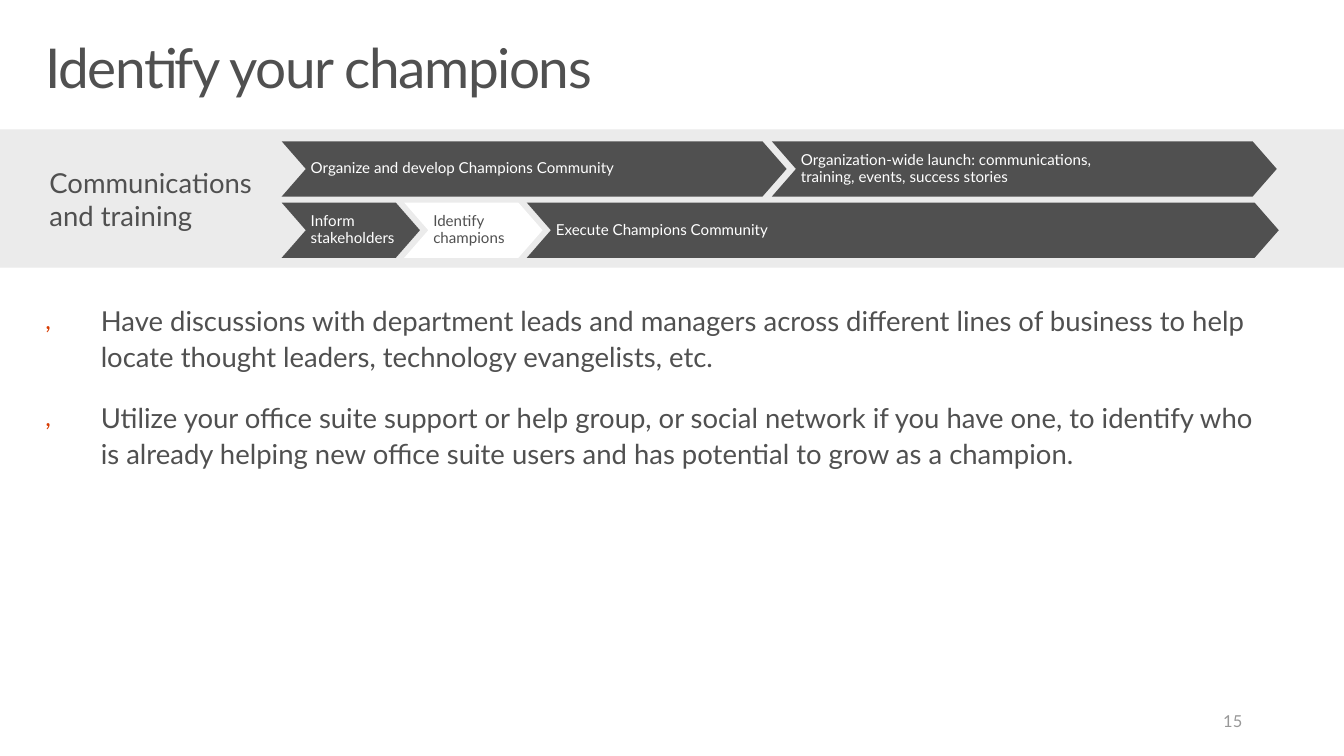
from dataclasses import dataclass

from lxml.etree import SubElement
from pptx import Presentation
from pptx.dml.color import RGBColor
from pptx.enum.shapes import MSO_SHAPE as Preset
from pptx.enum.text import MSO_ANCHOR as Anchor, MSO_AUTO_SIZE as AutoSize, PP_ALIGN as Align
from pptx.oxml.ns import qn
from pptx.shapes.autoshape import Shape
from pptx.shapes.group import GroupShape
from pptx.text.text import TextFrame, _Paragraph as Paragraph
from pptx.util import Inches, Pt


@dataclass(frozen=True)
class Theme:
    font: str = "Lato"
    dark: str = "505050"
    band: str = "EBEBEB"
    white: str = "FFFFFF"
    accent: str = "D83B01"
    muted: str = "989898"
    title_size: int = 40
    body_size: int = 20
    step_size: int = 11
    number_size: int = 12


@dataclass(frozen=True)
class Step:
    label: str
    width: float
    current: bool = False


@dataclass(frozen=True)
class Track:
    top: float
    overlap: float
    steps: tuple[Step, ...]


THEME = Theme()
TRACK_LEFT = 2.85
STEP_HEIGHT = 0.56
CHEVRON_POINT = 0.437
BULLET_INDENT = 0.56
TEXT_INSETS = (0.16, 0.1, 0.16, 0.1)

TRACKS = (
    Track(1.43, 0.15, (
        Step("Organize and develop Champions Community", 5.11),
        Step("Organization-wide launch: communications,\ntraining, events, success stories", 5.11),
    )),
    Track(2.05, 0.16, (
        Step("Inform stakeholders", 1.4),
        Step("Identify champions", 1.4, current=True),
        Step("Execute Champions Community", 7.61),
    )),
)

ADVICE = (
    "Have discussions with department leads and managers across different lines of business "
    "to help locate thought leaders, technology evangelists, etc.",
    "Utilize your office suite support or help group, or social network if you have one, "
    "to identify who is already helping new office suite users and has potential to grow "
    "as a champion.",
)


def place(box: Shape, left: float, top: float, width: float, height: float) -> None:
    box.left, box.top = Inches(left), Inches(top)
    box.width, box.height = Inches(width), Inches(height)


def set_frame(frame: TextFrame, insets: tuple[float, ...], anchor: Anchor) -> None:
    frame.word_wrap = True
    frame.vertical_anchor = anchor
    (frame.margin_left, frame.margin_top,
     frame.margin_right, frame.margin_bottom) = map(Inches, insets)


def write(para: Paragraph, text: str, size: int, color: str, tracking: float = 0) -> None:
    for index, line in enumerate(text.split("\n")):
        if index:
            para.add_line_break()
        span = para.add_run()
        span.text = line
        span.font.name = THEME.font
        span.font.size = Pt(size)
        span.font.color.rgb = RGBColor.from_string(color)
        if tracking:
            span.font._element.set("spc", str(round(tracking * 100)))


def add_bullet(para: Paragraph) -> None:
    props = para._p.get_or_add_pPr()
    props.set("marL", str(Inches(BULLET_INDENT)))
    props.set("indent", str(-Inches(BULLET_INDENT)))
    SubElement(SubElement(props, qn("a:buClr")), qn("a:srgbClr"), val=THEME.accent)
    SubElement(props, qn("a:buSzPct"), val="90000")
    SubElement(props, qn("a:buFont"), typeface=THEME.font)
    SubElement(props, qn("a:buChar"), char=",")


def add_block(group: GroupShape, preset: Preset, left: float, top: float,
              width: float, height: float, fill: str) -> Shape:
    block = group.shapes.add_shape(preset, Inches(left), Inches(top),
                                   Inches(width), Inches(height))
    block.shadow.inherit = False
    block.fill.solid()
    block.fill.fore_color.rgb = RGBColor.from_string(fill)
    block.line.fill.background()
    block.text_frame.paragraphs[0].alignment = Align.LEFT
    return block


def add_track(group: GroupShape, track: Track) -> None:
    left = TRACK_LEFT
    for step in track.steps:
        fill, color = ((THEME.white, THEME.dark) if step.current
                       else (THEME.dark, THEME.white))
        chevron = add_block(group, Preset.CHEVRON, left, track.top,
                            step.width, STEP_HEIGHT, fill)
        chevron.adjustments[0] = CHEVRON_POINT
        set_frame(chevron.text_frame, (0.05, 0.05, 0, 0.05), Anchor.MIDDLE)
        para = chevron.text_frame.paragraphs[0]
        para.line_spacing = 0.9
        write(para, step.label, THEME.step_size, color)
        left += step.width - track.overlap


def main() -> None:
    deck = Presentation()
    deck.slide_width, deck.slide_height = Inches(13.6), Inches(7.65)
    page = deck.slides.add_slide(deck.slide_layouts[1])

    # Title
    title = page.shapes.title
    place(title, 0.3, 0.32, 13, 1)
    set_frame(title.text_frame, TEXT_INSETS, Anchor.TOP)
    title.text_frame.auto_size = AutoSize.NONE
    heading = title.text_frame.paragraphs[0]
    heading.alignment = Align.LEFT
    heading.line_spacing = 0.9
    write(heading, "Identify your champions", THEME.title_size, THEME.dark, tracking=-1)

    # Advice list
    body = page.placeholders[1]
    place(body, 0.3, 2.94, 12.8, 1.91)
    frame = body.text_frame
    set_frame(frame, TEXT_INSETS, Anchor.TOP)
    frame.auto_size = AutoSize.SHAPE_TO_FIT_TEXT
    for index, advice in enumerate(ADVICE):
        para = frame.add_paragraph() if index else frame.paragraphs[0]
        add_bullet(para)
        para.line_spacing = 1.1
        para.space_before = Pt(12 if index else 0)
        para.space_after = Pt(6)
        write(para, advice, THEME.body_size, THEME.dark)

    # Roadmap band with its two tracks
    roadmap = page.shapes.add_group_shape()
    band = add_block(roadmap, Preset.RECTANGLE, 0, 1.31, 13.6, 1.4, THEME.band)
    set_frame(band.text_frame, (0.5, 0.05, 0.05, 0.05), Anchor.MIDDLE)
    write(band.text_frame.paragraphs[0], "Communications\nand training",
          THEME.body_size, THEME.dark)
    for track in TRACKS:
        add_track(roadmap, track)

    # Page number
    number = page.shapes.add_textbox(Inches(9.61), Inches(7.09), Inches(3.06), Inches(0.41))
    set_frame(number.text_frame, (0.1, 0.05, 0.1, 0.05), Anchor.MIDDLE)
    number_para = number.text_frame.paragraphs[0]
    number_para.alignment = Align.RIGHT
    write(number_para, "15", THEME.number_size, THEME.muted)

    deck.save("out.pptx")


if __name__ == "__main__":
    main()
